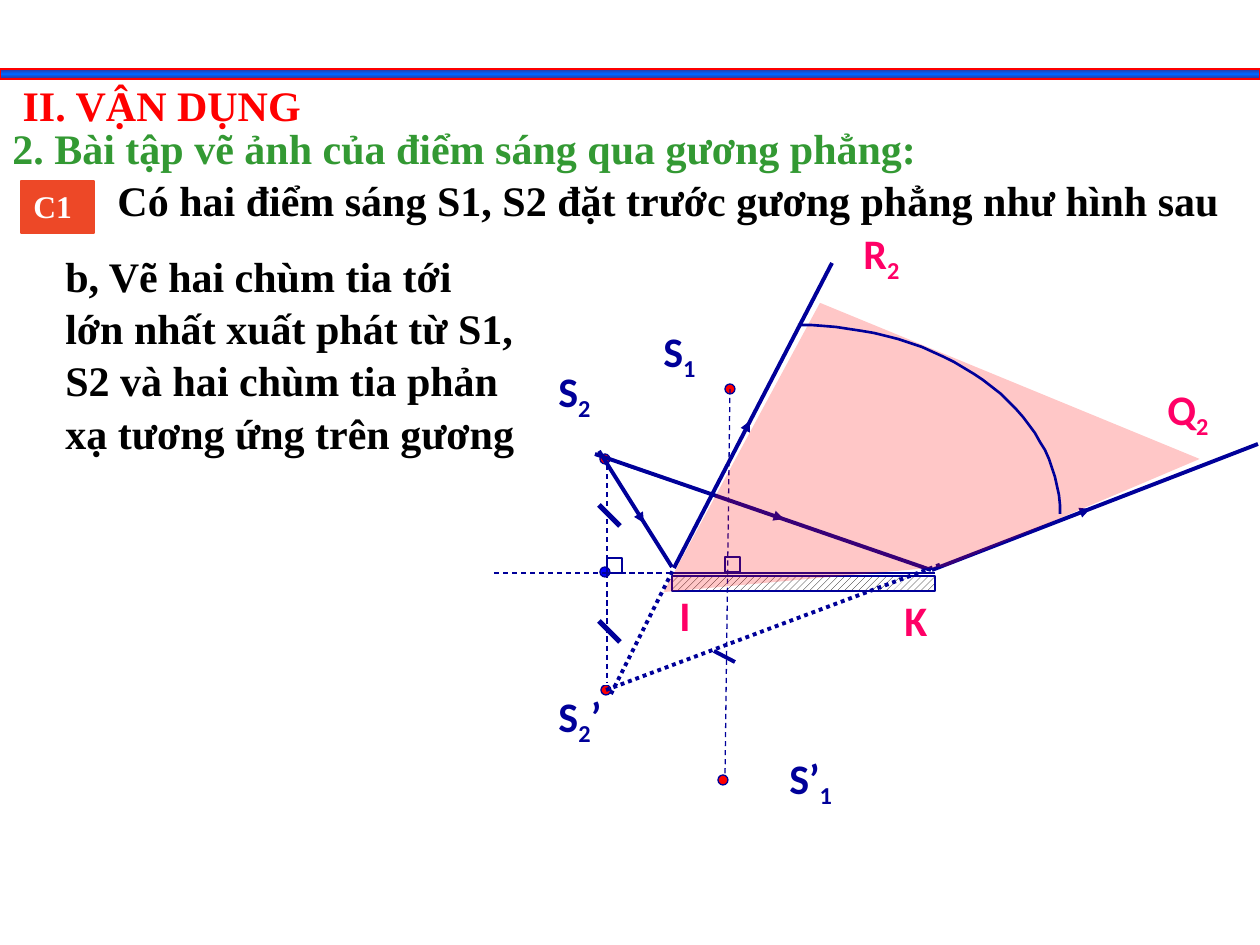
from copy import deepcopy
from dataclasses import dataclass
from math import cos, pi, sin

from lxml import etree
from pptx import Presentation
from pptx import util as u
from pptx.dml.color import RGBColor
from pptx.enum import dml, shapes, text
from pptx.oxml import ns

PX = 914400 / 126


@dataclass(frozen=True)
class Theme:
    navy: str = "000099"
    red: str = "FF0000"
    blue: str = "0000FF"
    pink: str = "FF0066"
    green: str = "339933"
    orange: str = "ED4827"
    black: str = "000000"
    white: str = "FFFFFF"
    bar: tuple = ("333399", "0066FF", "333399")
    serif: str = "Times New Roman"
    sans: str = "Calibri"
    size: int = 24
    badge_size: int = 18
    thin: float = 0.75
    arc: float = 1.5
    ray: float = 2.25
    tick: float = 3


T = Theme()
DASH = dml.MSO_LINE.DASH
DOT = dml.MSO_LINE.ROUND_DOT


def emu(*px):
    return [u.Emu(round(v * PX)) for v in px]


def rgb(value):
    return RGBColor.from_string(value)


def sub(parent, tag, **attrs):
    return etree.SubElement(parent, ns.qn(tag), attrs)


def paint(sp, fill=None, line=None, width=T.thin):
    sp.shadow.inherit = False
    if fill:
        sp.fill.solid()
        sp.fill.fore_color.rgb = rgb(fill)
    else:
        sp.fill.background()
    if line:
        sp.line.color.rgb = rgb(line)
        sp.line.width = u.Pt(width)
    else:
        sp.line.fill.background()
    return sp


def add_box(slide, box, fill=None, line=T.navy, kind=shapes.MSO_SHAPE.RECTANGLE):
    return paint(slide.shapes.add_shape(kind, *emu(*box)), fill, line)


def add_dot(slide, x, y, fill):
    add_box(slide, (x, y, 10, 10), fill,
            kind=shapes.MSO_SHAPE.FLOWCHART_CONNECTOR)


def add_line(container, ends, width=T.thin, dash=None, arrow=False):
    line = container.shapes.add_connector(shapes.MSO_CONNECTOR.STRAIGHT, *emu(*ends))
    line.line.color.rgb = rgb(T.navy)
    line.line.width = u.Pt(width)
    if dash:
        line.line.dash_style = dash
    if arrow:
        sub(line.line._get_or_add_ln(), "a:tailEnd", type="triangle")
    sub(line._element.spPr, "a:effectLst")


def add_ray(slide, ray, arrow, extension=None):
    """Group a light ray, its direction arrow and its dotted extension."""
    group = slide.shapes.add_group_shape()
    if extension:
        add_line(group, extension, T.ray, DOT)
    add_line(group, ray, T.ray)
    add_line(group, arrow, arrow=True)


def write(sp, words, color, font=T.serif, size=T.size,
          align=text.PP_ALIGN.LEFT):
    """Fill a shape with one bold paragraph; every second part between "_" is a subscript."""
    tf = sp.text_frame
    tf.word_wrap = True
    tf.auto_size = text.MSO_AUTO_SIZE.SHAPE_TO_FIT_TEXT
    tf.vertical_anchor = text.MSO_ANCHOR.TOP
    p = tf.paragraphs[0]
    p.alignment = align
    p.space_before = u.Pt(0)
    p.font.name, p.font.size, p.font.bold = font, u.Pt(size), True
    p.font.color.rgb = rgb(color)
    for i, part in enumerate(words.split("_")):
        r = p.add_run()
        r.text = part
        if i % 2:
            r._r.get_or_add_rPr().set("baseline", "-25000")
    return p


def add_text(slide, box, words, color, **style):
    return write(slide.shapes.add_textbox(*emu(*box)), words, color, **style)


def add_point_label(slide, box, words):
    write(add_box(slide, box, line=T.white), words, T.navy, font=T.sans)


def add_outline(slide, points, close):
    start, *rest = points
    builder = slide.shapes.build_freeform(*start, scale=PX)
    builder.add_line_segments(rest, close=close)
    return builder.convert_to_shape()


def add_beam(slide):
    """Shade the reflected beam with a translucent tilted wedge."""
    corners = [(832, 294), (650, 568), (934, 568), (1196, 484)]
    sp = paint(add_outline(slide, corners, True), T.red)
    sp.rotation = -5.2
    color = sp._element.spPr.find(".//" + ns.qn("a:srgbClr"))
    sub(color, "a:alpha", val="22000")


def add_quarter_arc(slide, cx, cy, rx, ry, steps=32):
    angles = [pi / 2 * i / steps for i in range(steps + 1)]
    points = [(cx + rx * sin(a), cy - ry * cos(a)) for a in angles]
    paint(add_outline(slide, points, False), None, T.navy, T.arc)


def add_mirror(slide):
    group = slide.shapes.add_group_shape()
    add_line(group, (672, 573, 935, 573))
    sp = add_box(group, (672, 576, 263, 15))
    sp.fill.patterned()
    sp.fill.pattern = dml.MSO_PATTERN.WIDE_UPWARD_DIAGONAL
    sp.fill.fore_color.rgb = rgb(T.black)
    sp.fill.back_color.rgb = rgb(T.white)


def add_top_bar(slide):
    sp = add_box(slide, (0, 69, 1260, 10), line=T.red)
    sp.fill.gradient()
    sp.fill.gradient_angle = 90
    stops = sp._element.spPr.find(".//" + ns.qn("a:gsLst"))
    stops.insert(1, deepcopy(stops[0]))
    for i, (stop, color) in enumerate(zip(sp.fill.gradient_stops, T.bar)):
        stop.position = i / 2
        stop.color.rgb = rgb(color)


def add_construction(slide):
    """Draw the source points, their images and the mirror."""
    add_point_label(slide, (546, 359, 73, 64), "S_2")
    add_point_label(slide, (651, 319, 84, 64), "S_1")
    add_dot(slide, 600, 454, T.red)
    add_dot(slide, 725, 384, T.red)
    add_dot(slide, 600, 567, T.blue)
    add_mirror(slide)
    add_line(slide, (494, 573, 672, 573), dash=DASH)
    add_line(slide, (607, 465, 607, 685), dash=DASH)
    add_dot(slide, 601, 685, T.red)
    add_box(slide, (607, 558, 15, 15))
    for y in (621, 505):
        add_line(slide, (599, y, 620, y + 21), T.tick)
    add_point_label(slide, (546, 684, 84, 64), "S_2_’")
    add_line(slide, (730, 389, 725, 777), dash=DASH)
    add_point_label(slide, (777, 746, 84, 64), "S’_1")
    add_dot(slide, 718, 775, T.red)
    add_box(slide, (725, 557, 15, 15))
    add_line(slide, (714, 651, 735, 662), T.ray)


def add_rays(slide):
    add_ray(slide, (595, 454, 931, 570), (626, 466, 784, 519))
    add_ray(slide, (599, 451, 672, 567), (624, 491, 644, 523))
    add_ray(slide, (674, 568, 832, 263), (718, 484, 750, 421), (611, 694, 674, 568))
    add_ray(slide, (932, 570, 1258, 444), (1037, 529, 1090, 509), (606, 690, 942, 564))
    add_beam(slide)
    add_quarter_arc(slide, 798, 514, 262, 189)


def add_texts(slide):
    task = add_text(slide, (53, 242, 476, 265),
                    "b, Vẽ hai chùm tia tới lớn nhất xuất phát từ S1, S2 và hai "
                    "chùm tia phản xạ tương ứng trên gương", T.black)
    task.line_spacing = 1.04
    badge = add_box(slide, (21, 181, 73, 52), T.orange, T.orange)
    write(badge, "C1", T.white, size=T.badge_size)
    add_text(slide, (105, 168, 1155, 63),
             "Có hai điểm sáng S1, S2 đặt trước gương phẳng như hình sau", T.black)
    add_text(slide, (0, 116, 1207, 63),
             "2. Bài tập vẽ ảnh của điểm sáng qua gương phẳng:", T.green)
    title = slide.shapes.title
    title.left, title.top, title.width, title.height = emu(10, 73, 420, 63)
    write(title, "II. VẬN DỤNG", T.red)
    for x, y, words, align in (
            (851, 221, "R_2", text.PP_ALIGN.LEFT),
            (1155, 377, "Q_2", text.PP_ALIGN.LEFT),
            (643, 583, "I", text.PP_ALIGN.CENTER),
            (892, 588, "K", text.PP_ALIGN.LEFT)):
        add_text(slide, (x, y, 84, 63), words, T.pink, font=T.sans, align=align)


def main():
    prs = Presentation()
    prs.slide_width, prs.slide_height = emu(1260, 945)
    slide = prs.slides.add_slide(prs.slide_layouts[5])
    add_construction(slide)
    add_rays(slide)
    add_texts(slide)
    add_top_bar(slide)
    prs.save("out.pptx")


if __name__ == "__main__":
    main()
